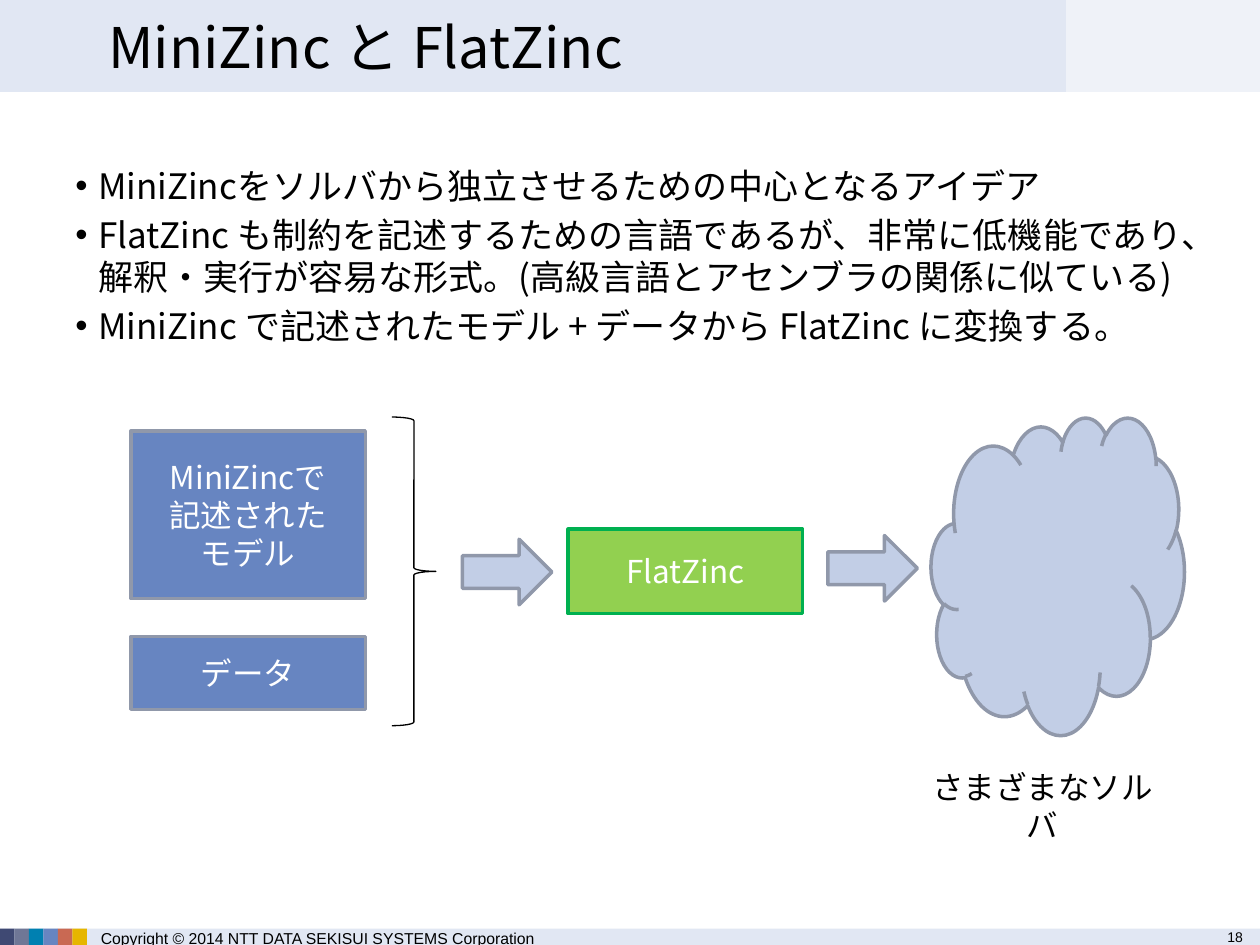
import pptx
import pptx.util
import pptx.dml.color
import pptx.enum.shapes
import pptx.enum.text
import pptx.oxml.ns
from lxml import etree

Inches = pptx.util.Inches
Pt = pptx.util.Pt
RGBColor = pptx.dml.color.RGBColor
SHAPE = pptx.enum.shapes.MSO_SHAPE
ALIGN = pptx.enum.text.PP_ALIGN
ANCHOR = pptx.enum.text.MSO_ANCHOR
qn = pptx.oxml.ns.qn

BLACK = RGBColor(0x00, 0x00, 0x00)
WHITE = RGBColor(0xFF, 0xFF, 0xFF)
PALE = RGBColor(0xE1, 0xE7, 0xF3)
BLUE = RGBColor(0x67, 0x85, 0xC1)
LIGHT_BLUE = RGBColor(0xC2, 0xCE, 0xE6)
GRAY = RGBColor(0x90, 0x98, 0xAA)
GREEN = RGBColor(0x92, 0xD0, 0x50)
DARK_GREEN = RGBColor(0x00, 0xB0, 0x50)
STRIPES = [
    RGBColor(0x3F, 0x49, 0x73),
    RGBColor(0x6F, 0x77, 0x96),
    RGBColor(0x00, 0x80, 0xB1),
    BLUE,
    RGBColor(0xC9, 0x69, 0x53),
    RGBColor(0xE6, 0xB6, 0x00),
]
FONT = "Noto Sans CJK JP"
FOOTER_FONT = "Arial"
FOOTER_TOP = 7.37
FOOTER_HEIGHT = 0.13

BULLETS = [
    "MiniZincをソルバから独立させるための中心となるアイデア",
    "FlatZinc も制約を記述するための言語であるが、非常に低機能であり、"
    "解釈・実行が容易な形式。(高級言語とアセンブラの関係に似ている)",
    "MiniZinc で記述されたモデル + データから FlatZinc に変換する。",
]


def add_run(p, text, size, color, font=FONT):
    r = p.add_run()
    r.text = text
    r.font.size = Pt(size)
    r.font.name = font
    r.font.color.rgb = color
    ea = etree.SubElement(r.font._element, qn("a:ea"))
    ea.set("typeface", font)


def write_lines(tf, lines, size, color, align=ALIGN.LEFT):
    tf.word_wrap = True
    for i, line in enumerate(lines):
        p = tf.add_paragraph() if i else tf.paragraphs[0]
        p.alignment = align
        p.line_spacing = Pt(size * 1.2)
        add_run(p, line, size, color)


def add_shape(s, kind, box, fill=None, line=None, width=2):
    sp = s.shapes.add_shape(kind, *map(Inches, box))
    sp.shadow.inherit = False
    if fill is None:
        sp.fill.background()
    else:
        sp.fill.solid()
        sp.fill.fore_color.rgb = fill
    if line is None:
        sp.line.fill.background()
    else:
        sp.line.color.rgb = line
        sp.line.width = Pt(width)
    return sp


def add_box(s, box, lines, fill, line):
    sp = add_shape(s, SHAPE.RECTANGLE, box, fill, line)
    tf = sp.text_frame
    tf.vertical_anchor = ANCHOR.MIDDLE
    write_lines(tf, lines, 18, WHITE, ALIGN.CENTER)


def add_text(s, box):
    return s.shapes.add_textbox(*map(Inches, box)).text_frame


def add_footer_text(s, box, text, size):
    tf = add_text(s, box)
    tf.word_wrap = True
    tf.margin_top = tf.margin_bottom = 0
    tf.margin_left = tf.margin_right = Inches(0.09)
    add_run(tf.paragraphs[0], text, size, BLACK, FOOTER_FONT)


def add_bands(s):
    add_shape(s, SHAPE.RECTANGLE, (0, FOOTER_TOP, 10, FOOTER_HEIGHT), PALE)
    for i, color in enumerate(STRIPES):
        add_shape(s, SHAPE.RECTANGLE,
                  (i * 0.115, FOOTER_TOP, 0.115, FOOTER_HEIGHT), color)
    add_shape(s, SHAPE.RECTANGLE, (0, 0, 8.46, 0.73), PALE)
    corner = add_shape(s, SHAPE.RECTANGLE, (8.46, 0, 1.54, 0.73), PALE)
    color = corner._element.spPr.find(qn("a:solidFill"))[0]
    etree.SubElement(color, qn("a:alpha")).set("val", "50000")
    add_footer_text(s, (9.65, FOOTER_TOP, 0.35, FOOTER_HEIGHT), "18", 8)
    add_footer_text(s, (0.71, FOOTER_TOP, 3.89, FOOTER_HEIGHT),
                    "Copyright © 2014 NTT DATA SEKISUI SYSTEMS Corporation", 9)


def set_title(s, text):
    title = s.shapes.title
    title.left, title.top, title.width, title.height = map(
        Inches, (0.68, 0, 7.7, 0.73))
    tf = title.text_frame
    tf.auto_size = pptx.enum.text.MSO_AUTO_SIZE.NONE
    tf.vertical_anchor = ANCHOR.MIDDLE
    tf.margin_left = tf.margin_right = Inches(0.18)
    write_lines(tf, [text], 32, BLACK)
    s.shapes._spTree.append(title._element)


def add_bullets(s, box, lines):
    tf = add_text(s, box)
    write_lines(tf, lines, 20, BLACK)
    for i, p in enumerate(tf.paragraphs):
        if i:
            p.space_before = Pt(4)
        pPr = p._p.get_or_add_pPr()
        pPr.set("marL", str(Inches(0.18)))
        pPr.set("indent", str(-Inches(0.18)))
        etree.SubElement(pPr, qn("a:buFont")).set("typeface", FOOTER_FONT)
        etree.SubElement(pPr, qn("a:buChar")).set("char", "•")


def add_diagram(s):
    add_box(s, (1.04, 3.42, 1.86, 1.33),
            ["MiniZincで", "記述された", "モデル"], BLUE, GRAY)
    add_box(s, (1.04, 5.05, 1.86, 0.58), ["データ"], BLUE, GRAY)
    add_shape(s, SHAPE.RIGHT_BRACE, (3.11, 3.31, 0.35, 2.45),
              line=BLACK, width=0.75)
    add_box(s, (4.51, 4.2, 1.86, 0.67), ["FlatZinc"], GREEN, DARK_GREEN)
    add_shape(s, SHAPE.CLOUD, (7.39, 3.31, 2.01, 2.52), LIGHT_BLUE, GRAY)
    for left, top in ((3.67, 4.28), (6.57, 4.25)):
        add_shape(s, SHAPE.RIGHT_ARROW, (left, top, 0.71, 0.52),
                  LIGHT_BLUE, GRAY)
    write_lines(add_text(s, (7.27, 6.05, 2.01, 0.4)),
                ["さまざまなソルバ"], 18, BLACK, ALIGN.CENTER)


def main():
    prs = pptx.Presentation()
    prs.slide_width, prs.slide_height = Inches(10), Inches(7.5)
    s = prs.slides.add_slide(prs.slide_layouts[5])
    add_bands(s)
    add_bullets(s, (0.5, 1.26, 9, 5.44), BULLETS)
    set_title(s, "MiniZinc と FlatZinc")
    add_diagram(s)
    prs.save("out.pptx")


if __name__ == "__main__":
    main()
